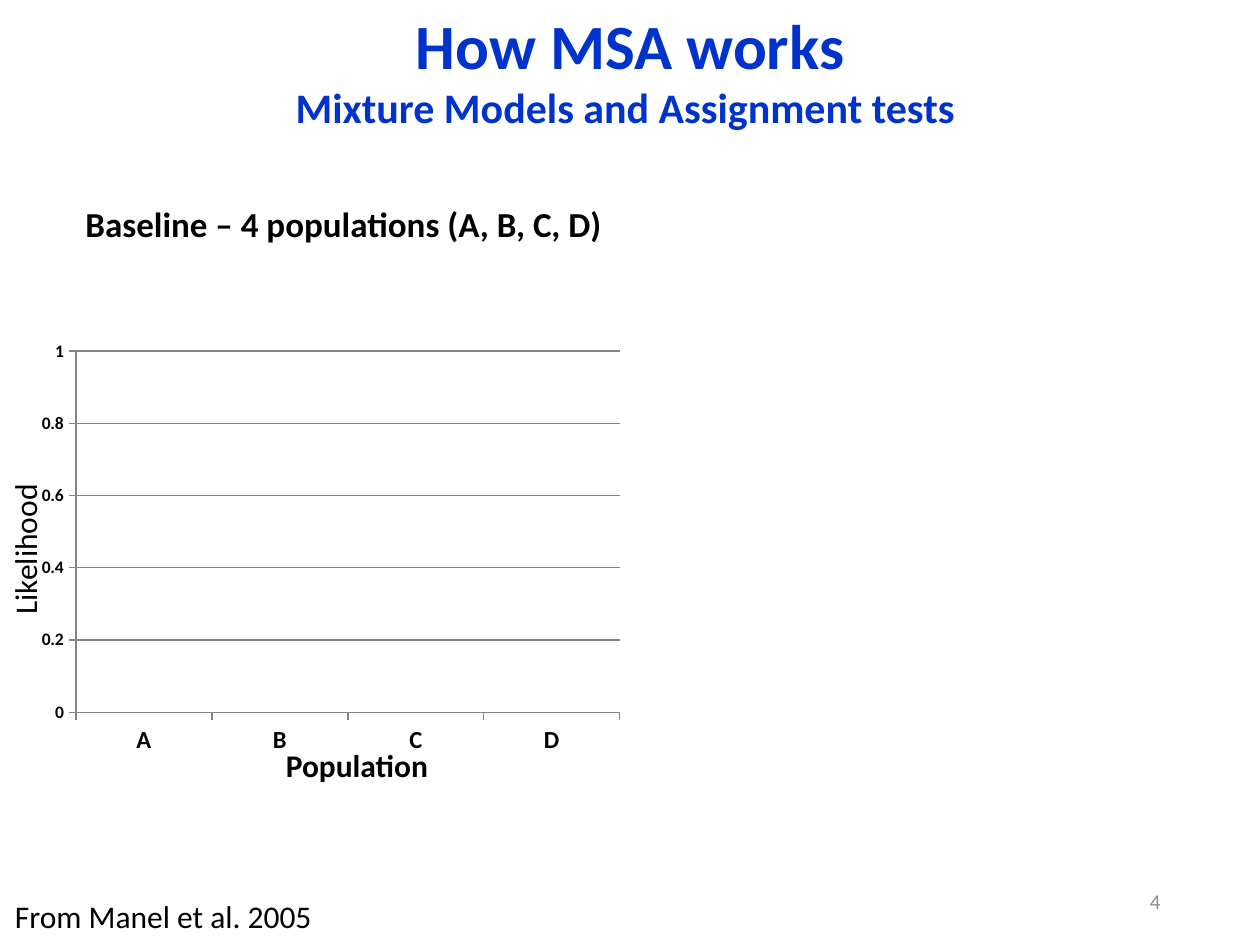
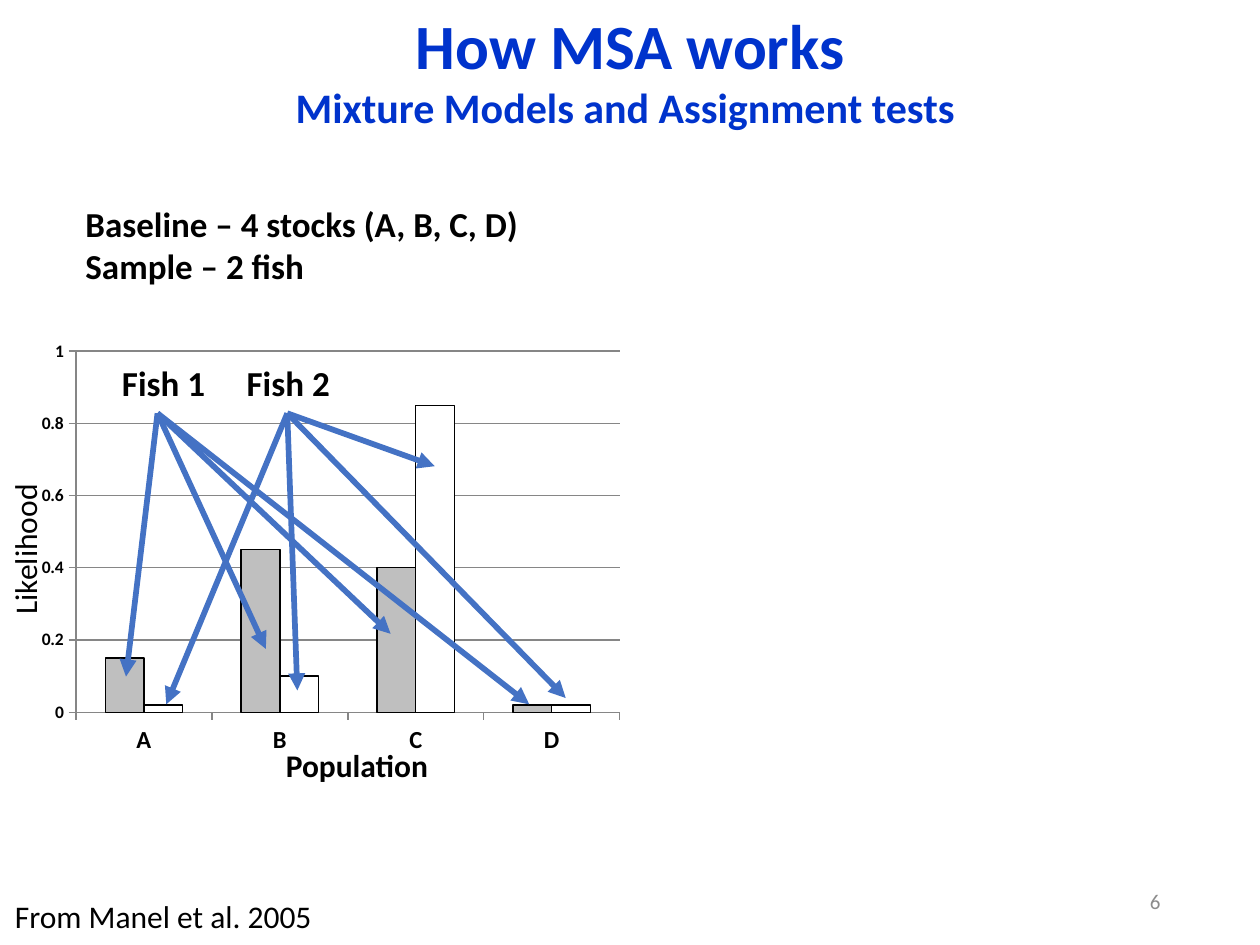
from lxml import etree
from pptx import Presentation
from pptx.chart.data import CategoryChartData
from pptx.dml.color import RGBColor
from pptx.enum.chart import XL_CHART_TYPE as ChartType, XL_TICK_MARK as TickMark
from pptx.enum.shapes import MSO_CONNECTOR as Connector
from pptx.enum.text import MSO_ANCHOR as Anchor, MSO_AUTO_SIZE as AutoSize, PP_ALIGN as Align
from pptx.oxml import parse_xml
from pptx.oxml.ns import nsdecls, qn
from pptx.util import Inches, Pt

FONT = "Calibri"
BLUE = RGBColor(0x00, 0x33, 0xCC)
ARROW_BLUE = RGBColor(0x44, 0x72, 0xC4)
BLACK = RGBColor(0x00, 0x00, 0x00)
WHITE = RGBColor(0xFF, 0xFF, 0xFF)
BAR_GRAY = RGBColor(0xBF, 0xBF, 0xBF)
AXIS_GRAY = RGBColor(0x86, 0x86, 0x86)
NUMBER_GRAY = RGBColor(0x8C, 0x8C, 0x8C)

# Content
TITLE = [("How MSA works", 36), ("Mixture Models and Assignment tests ", 24)]
SOURCE = "From Manel et al. 2005"
POPULATIONS = ["A", "B", "C", "D"]
CHART_BOX = (0.24, 2.64, 4.78, 3.42)
PLOT_LAYOUT = {"x": 0.076, "y": 0.043, "w": 0.903, "h": 0.838}

# Series: name, values, fill (None leaves the bars invisible)
# Fish: label, label left, arrow start, arrow ends
SLIDES = [
    {
        "number": "4",
        "heading": "Baseline – 4 populations (A, B, C, D)",
        "heading_size": (4.34, 0.44),
        "gap": 337,
        "series": [("Series 1", (0.02, 0.1, 0.85, 0.02), None)],
        "fish": [],
    },
    {
        "number": "6",
        "heading": "Baseline – 4 stocks (A, B, C, D)\nSample – 2 fish",
        "heading_size": (3.67, 0.77),
        "gap": 150,
        "series": [
            ("Series 1", (0.15, 0.45, 0.4, 0.02), BAR_GRAY),
            ("Series 2", (0.02, 0.1, 0.85, 0.02), WHITE),
        ],
        "fish": [
            ("Fish 1", 0.87, (1.25, 3.28),
             [(1, 5.37), (2.11, 5.15), (3.1, 5.03), (4.2, 5.59)]),
            ("Fish 2", 1.86, (2.28, 3.28),
             [(1.32, 5.59), (2.36, 5.48), (4.49, 5.54), (3.45, 3.7)]),
        ],
    },
]


def format_font(font, size, color=BLACK, bold=False):
    font.name = FONT
    font.size = Pt(size)
    font.bold = bold
    font.color.rgb = color


def add_text(slide, text, box, size, color=BLACK, bold=False, wrap=False, align=Align.LEFT):
    shape = slide.shapes.add_textbox(*map(Inches, box))
    frame = shape.text_frame
    frame.text = text
    frame.word_wrap = wrap
    frame.auto_size = AutoSize.SHAPE_TO_FIT_TEXT
    for paragraph in frame.paragraphs:
        paragraph.alignment = align
        for run in paragraph.runs:
            format_font(run.font, size, color, bold)
    return shape


def add_title(slide):
    title = slide.shapes.title
    title.left, title.top, title.width, title.height = map(Inches, (0, 0, 10, 1.11))
    frame = title.text_frame
    frame.text = "\n".join(line for line, _ in TITLE)
    frame.word_wrap = True
    frame.auto_size = AutoSize.NONE
    frame.vertical_anchor = Anchor.TOP
    for paragraph, (_, size) in zip(frame.paragraphs, TITLE):
        paragraph.alignment = Align.CENTER
        format_font(paragraph.runs[0].font, size, BLUE, True)


def set_line(line, color, width=0.75):
    line.color.rgb = color
    line.width = Pt(width)


def add_likelihood_chart(slide, series_list, gap):
    data = CategoryChartData()
    data.categories = POPULATIONS
    for name, values, _ in series_list:
        data.add_series(name, values)
    chart = slide.shapes.add_chart(
        ChartType.COLUMN_CLUSTERED, *map(Inches, CHART_BOX), data).chart
    chart.has_legend = False
    chart.has_title = False
    format_font(chart.font, 10)

    # Axes
    for axis, size in ((chart.category_axis, 14), (chart.value_axis, 10)):
        axis.major_tick_mark = TickMark.OUTSIDE
        axis.minor_tick_mark = TickMark.NONE
        format_font(axis.tick_labels.font, size, bold=True)
        set_line(axis.format.line, AXIS_GRAY)
    value_axis = chart.value_axis
    value_axis.minimum_scale, value_axis.maximum_scale = 0, 1
    value_axis.major_unit = 0.2
    value_axis.has_major_gridlines = True
    set_line(value_axis.major_gridlines.format.line, AXIS_GRAY)

    # Bars
    plot = chart.plots[0]
    plot.gap_width = gap
    plot.overlap = 0
    plot.vary_by_categories = False
    for series, (_, _, color) in zip(plot.series, series_list):
        series.invert_if_negative = False
        if color is None:
            series.format.fill.background()
            series.format.line.fill.background()
        else:
            series.format.fill.solid()
            series.format.fill.fore_color.rgb = color
            set_line(series.format.line, BLACK)

    # Fixed inner plot area
    plot_area = chart.element.find(".//" + qn("c:plotArea"))
    for old_layout in plot_area.findall(qn("c:layout")):
        plot_area.remove(old_layout)
    settings = {"layoutTarget": "inner", "xMode": "edge", "yMode": "edge", **PLOT_LAYOUT}
    tags = "".join(f'<c:{tag} val="{value}"/>' for tag, value in settings.items())
    plot_area.insert(0, parse_xml(
        f'<c:layout {nsdecls("c")}><c:manualLayout>{tags}</c:manualLayout></c:layout>'))


def add_arrow(slide, start, end):
    arrow = slide.shapes.add_connector(Connector.STRAIGHT, *map(Inches, start + end))
    set_line(arrow.line, ARROW_BLUE, 3.25)
    etree.SubElement(arrow.line._get_or_add_ln(), qn("a:tailEnd"), type="triangle")
    etree.SubElement(arrow._element.spPr, qn("a:effectLst"))


def build_slide(presentation, content):
    slide = presentation.slides.add_slide(presentation.slide_layouts[5])
    add_text(slide, SOURCE, (0.02, 7.07, 3.67, 0.4), 18, wrap=True)
    add_title(slide)

    # Chart with its axis titles
    add_likelihood_chart(slide, content["series"], content["gap"])
    add_text(slide, "Likelihood", (-0.43, 4.15, 1.25, 0.4), 18).rotation = 270
    add_text(slide, "Population", (2.17, 5.87, 1.34, 0.4), 18, bold=True)

    # Heading and slide number
    add_text(slide, content["heading"], (0.58, 1.56, *content["heading_size"]), 20, bold=True)
    number = add_text(slide, content["number"], (7.06, 6.95, 2.25, 0.4), 12,
                      NUMBER_GRAY, wrap=True, align=Align.RIGHT)
    number.text_frame.auto_size = AutoSize.NONE
    number.text_frame.vertical_anchor = Anchor.MIDDLE

    # Fish labels, each pointing at its bars
    for label, left, start, ends in content["fish"]:
        add_text(slide, label, (left, 2.82, 0.87, 0.44), 20, bold=True)
        for end in ends:
            add_arrow(slide, start, end)


def main():
    presentation = Presentation()
    presentation.slide_width, presentation.slide_height = Inches(10), Inches(7.5)
    for content in SLIDES:
        build_slide(presentation, content)
    presentation.save("out.pptx")


if __name__ == "__main__":
    main()
